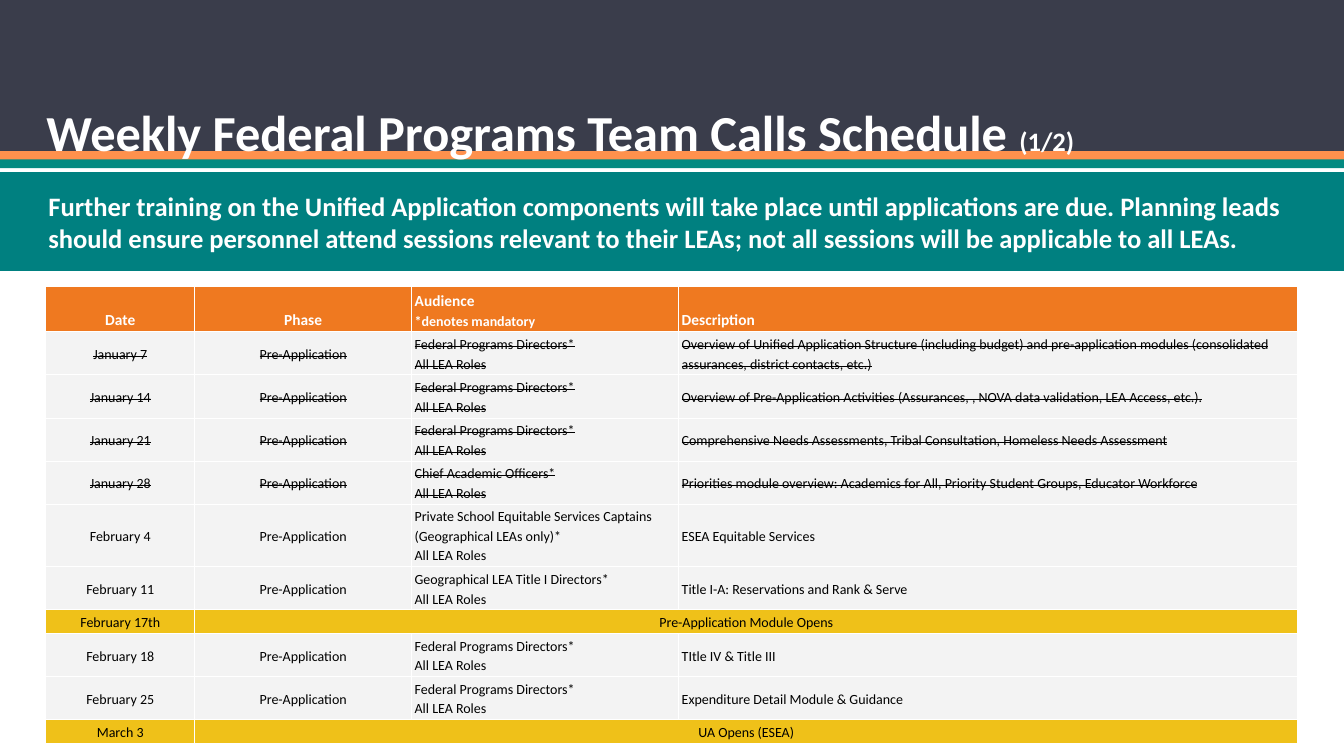
from dataclasses import dataclass

from lxml.etree import SubElement as SubEl
from pptx import Presentation as Deck
from pptx.dml.color import RGBColor as Color
from pptx.enum.shapes import MSO_SHAPE as Shape
from pptx.enum.text import MSO_ANCHOR as Anchor, MSO_AUTO_SIZE as Fit, PP_ALIGN as Align
from pptx.oxml.ns import qn
from pptx.util import Cm, Pt

FONT = "Calibri"
NAVY = Color(0x3A, 0x3D, 0x4B)
CORAL = Color(0xFF, 0x91, 0x4D)
GREEN = Color(0x04, 0x8A, 0x81)
TEAL = Color(0x00, 0x80, 0x80)
ORANGE = Color(0xEF, 0x79, 0x20)
GREY = Color(0xF3, 0xF3, 0xF3)
GOLD = Color(0xEF, 0xC1, 0x19)
WHITE = Color(0xFF, 0xFF, 0xFF)
BLACK = Color(0x00, 0x00, 0x00)

WIDE, TALL = Cm(33.87), Cm(19.05)
COLS = (3.76, 5.46, 6.73, 15.6)
HEIGHTS = {1: 0.6, 2: 1.02, 3: 1.47}
PRE = "Pre-Application"
HEADS = "Federal Programs Directors*\nAll LEA Roles"


@dataclass
class Bar:
    top: float
    height: float
    fill: Color


@dataclass
class Call:
    date: str
    phase: str
    crowd: str = ""
    about: str = ""
    done: bool = False
    lines: int = 2


BARS = (Bar(0, 3.81, NAVY), Bar(3.81, 0.22, CORAL), Bar(4.02, 0.22, GREEN))
NOTE = (
    "Further training on the Unified Application components will take place until "
    "applications are due. Planning leads should ensure personnel attend sessions "
    "relevant to their LEAs; not all sessions will be applicable to all LEAs."
)
HEADER = Call("Date", "Phase", "Audience\n*denotes mandatory", "Description")
CALLS = (
    Call("January 7", PRE, HEADS,
         "Overview of Unified Application Structure (including budget) and pre-application "
         "modules (consolidated assurances, district contacts, etc.)", True),
    Call("January 14", PRE, HEADS,
         "Overview of Pre-Application Activities (Assurances, , NOVA data validation, "
         "LEA Access, etc.).", True),
    Call("January 21", PRE, HEADS,
         "Comprehensive Needs Assessments, Tribal Consultation, Homeless Needs Assessment", True),
    Call("January 28", PRE, "Chief Academic Officers*\nAll LEA Roles",
         "Priorities module overview: Academics for All, Priority Student Groups, "
         "Educator Workforce", True),
    Call("February 4", PRE,
         "Private School Equitable Services Captains (Geographical LEAs only)*\nAll LEA Roles",
         "ESEA Equitable Services", lines=3),
    Call("February 11", PRE, "Geographical LEA Title I Directors*\nAll LEA Roles",
         "Title I-A: Reservations and Rank & Serve"),
    Call("February 17th", "Pre-Application Module Opens", lines=1),
    Call("February 18", PRE, HEADS, "TItle IV & Title III"),
    Call("February 25", PRE, HEADS, "Expenditure Detail Module & Guidance"),
    Call("March 3", "UA Opens (ESEA)", lines=1),
)


def add_run(para, text: str, size: float, color: Color, bold: bool = True, struck: bool = False) -> None:
    run = para.add_run()
    run.text = text
    font = run.font
    font.name, font.size, font.bold = FONT, Pt(size), bold
    font.color.rgb = color
    if struck:
        run._r.get_or_add_rPr().set("strike", "sngStrike")


def set_pad(frame, pad: float) -> None:
    frame.margin_left = frame.margin_right = Cm(pad)
    frame.margin_top = frame.margin_bottom = Cm(pad)


def add_bar(slide, bar: Bar):
    shape = slide.shapes.add_shape(Shape.RECTANGLE, 0, Cm(bar.top), WIDE, Cm(bar.height))
    shape.shadow.inherit = False
    shape.fill.solid()
    shape.fill.fore_color.rgb = bar.fill
    shape.line.fill.background()
    return shape


def add_title(slide) -> None:
    title = slide.shapes.title
    title.left, title.top, title.width, title.height = Cm(0.84), Cm(1.6), Cm(32.38), Cm(2.11)
    title.element.getparent().append(title.element)
    frame = title.text_frame
    frame.word_wrap = True
    frame.auto_size = Fit.NONE
    frame.vertical_anchor = Anchor.TOP
    set_pad(frame, 0.33)
    para = frame.paragraphs[0]
    para.alignment, para.line_spacing = Align.LEFT, 1.4
    add_run(para, "Weekly Federal Programs Team Calls Schedule ", 36, WHITE)
    add_run(para, "(1/2)", 19, WHITE)


def add_note(slide) -> None:
    frame = add_bar(slide, Bar(4.34, 2.49, TEAL)).text_frame
    frame.word_wrap = True
    frame.vertical_anchor = Anchor.MIDDLE
    set_pad(frame, 0.25)
    para = frame.paragraphs[0]
    para.alignment = Align.LEFT
    props = para._p.get_or_add_pPr()
    props.set("marL", str(Cm(0.97)))
    props.set("indent", "0")
    add_run(para, NOTE, 19, WHITE)


def style_cell(cell, fill: Color) -> None:
    props = cell._tc.get_or_add_tcPr()
    for side in ("a:lnL", "a:lnR", "a:lnT", "a:lnB"):
        line = SubEl(props, qn(side), w=str(Pt(0.75)))
        SubEl(SubEl(line, qn("a:solidFill")), qn("a:srgbClr"), val=str(WHITE))
    cell.fill.solid()
    cell.fill.fore_color.rgb = fill
    cell.margin_left = cell.margin_right = Cm(0.08)
    cell.margin_top = cell.margin_bottom = Cm(0.05)


def fill_row(table, row: int, call: Call) -> None:
    head, opens = call is HEADER, not call.crowd
    fill = ORANGE if head else GOLD if opens else GREY
    table.rows[row].height = Cm(HEIGHTS[call.lines])
    for col, text in enumerate((call.date, call.phase, call.crowd, call.about)):
        cell = table.cell(row, col)
        style_cell(cell, fill)
        cell.vertical_anchor = Anchor.BOTTOM if head else Anchor.MIDDLE
        if not text:
            continue
        frame = cell.text_frame
        for index, line in enumerate(text.split("\n")):
            para = frame.add_paragraph() if index else frame.paragraphs[0]
            para.alignment = Align.CENTER if col < 2 else Align.LEFT
            para.line_spacing = 1.15
            size = 11 if head and not index else 10
            add_run(para, line, size, WHITE if head else BLACK, head, call.done)
    if opens:
        table.cell(row, 1).merge(table.cell(row, 3))


def add_calls(slide) -> None:
    rows = (HEADER, *CALLS)
    height = sum(HEIGHTS[call.lines] for call in rows)
    frame = slide.shapes.add_table(
        len(rows), len(COLS), Cm(1.15), Cm(7.22), Cm(sum(COLS)), Cm(height))
    table = frame.table
    table.first_row = table.horz_banding = False
    for col, width in zip(table.columns, COLS):
        col.width = Cm(width)
    for row, call in enumerate(rows):
        fill_row(table, row, call)


def main() -> None:
    deck = Deck()
    deck.slide_width, deck.slide_height = WIDE, TALL
    slide = deck.slides.add_slide(deck.slide_layouts[5])
    for bar in BARS:
        add_bar(slide, bar)
    add_title(slide)
    add_calls(slide)
    add_note(slide)
    deck.save("out.pptx")


if __name__ == "__main__":
    main()
